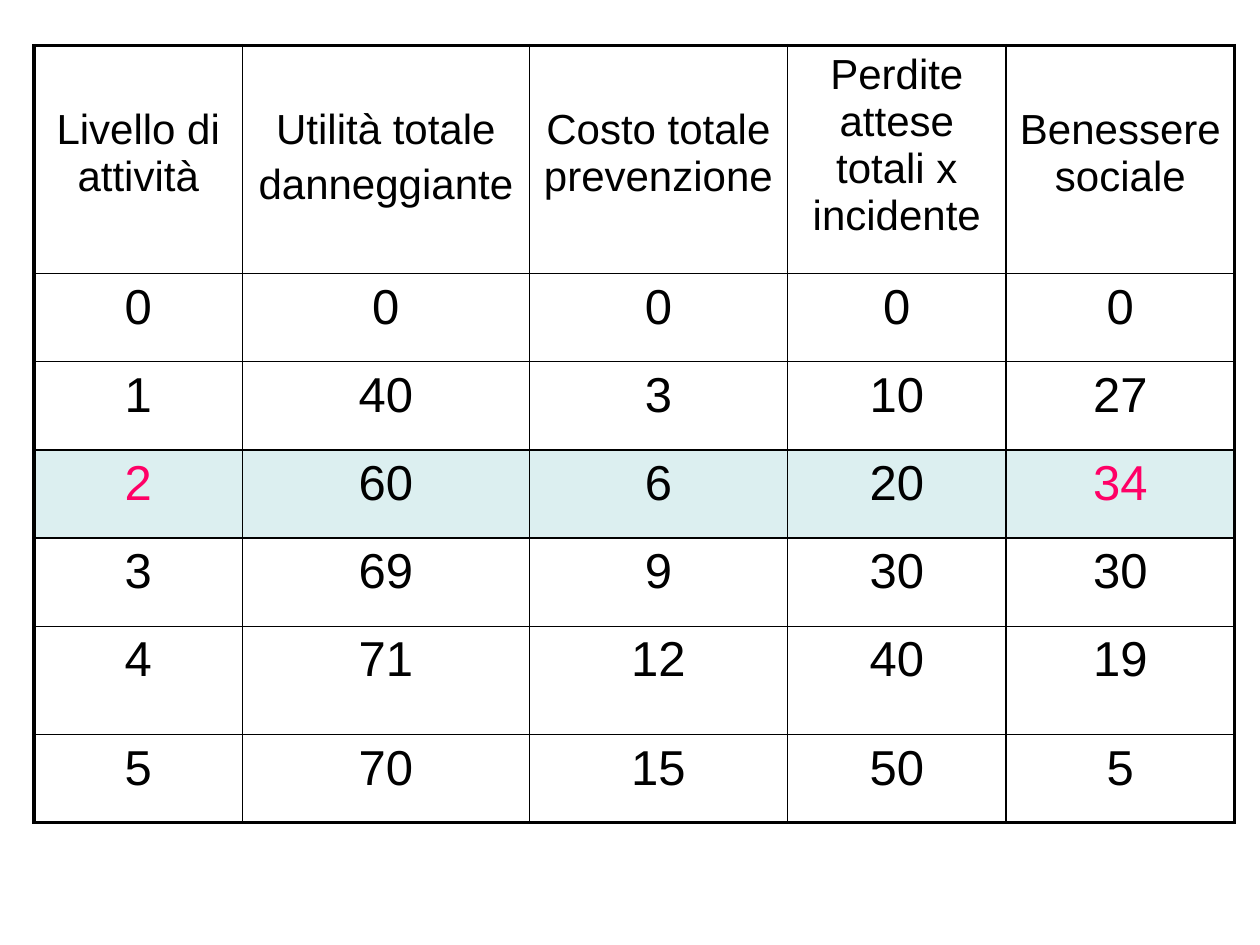
from lxml import etree
from pptx import Presentation
from pptx.dml.color import RGBColor
from pptx.enum.text import PP_ALIGN
from pptx.oxml.ns import qn
from pptx.util import Pt

CENTER = PP_ALIGN.CENTER
BLANK_LAYOUT = 6

# Content: each header is a list of paragraphs
HEADERS = [
    ["Livello di attività"],
    ["Utilità totale", "danneggiante"],
    ["Costo totale prevenzione"],
    ["Perdite attese totali x incidente"],
    ["Benessere sociale"],
]
LEVELS = [
    (0, 0, 0, 0, 0),
    (1, 40, 3, 10, 27),
    (2, 60, 6, 20, 34),
    (3, 69, 9, 30, 30),
    (4, 71, 12, 40, 19),
    (5, 70, 15, 50, 5),
]
OPTIMUM_ROW = 3
OPTIMUM_COLUMNS = (0, 4)
TALL_HEADER_COLUMN = 3

# Look, lengths in points
FONT = "Arial"
BLACK, PINK, PALE_TEAL = "000000", "FF0066", "BBE0E3"
HEADER_SIZE, VALUE_SIZE = 24, 28
OUTER_LINE, INNER_LINE = 2.25, 1
LEFT, TOP = 19.5, 26
COLUMN_WIDTHS = [119, 164, 147.5, 125, 130.5]
ROW_HEIGHTS = [130.3, 50.4, 50.4, 50.4, 50.4, 61.9, 50.4]
HEADER_DROP = 35


def rgb(hex_color):
    return RGBColor.from_string(hex_color)


def add_border(cell, side, width):
    line = etree.SubElement(cell._tc.get_or_add_tcPr(), qn(f"a:ln{side}"), w=str(Pt(width)))
    fill = etree.SubElement(line, qn("a:solidFill"))
    etree.SubElement(fill, qn("a:srgbClr"), val=BLACK)


def fill_half_clear(cell, color):
    cell.fill.solid()
    cell.fill.fore_color.rgb = rgb(color)
    color_element = cell._tc.tcPr.find(qn("a:solidFill")).find(qn("a:srgbClr"))
    etree.SubElement(color_element, qn("a:alpha"), val="50000")


def write(cell, paragraphs, size, color):
    frame = cell.text_frame
    for index, words in enumerate(paragraphs):
        paragraph = frame.add_paragraph() if index else frame.paragraphs[0]
        paragraph.alignment = CENTER
        paragraph.space_before = Pt(0.2 * size if index else 0)
        run = paragraph.add_run()
        run.text = words
        run.font.name = FONT
        run.font.size = Pt(size)
        run.font.color.rgb = rgb(color)


def main():
    prs = Presentation()
    prs.slide_width, prs.slide_height = Pt(720), Pt(540)
    slide = prs.slides.add_slide(prs.slide_layouts[BLANK_LAYOUT])

    # Table grid
    rows = [HEADERS] + [[[str(value)] for value in level] for level in LEVELS]
    last_row, last_column = len(rows) - 1, len(HEADERS) - 1
    table = slide.shapes.add_table(
        len(rows), len(HEADERS), Pt(LEFT), Pt(TOP),
        Pt(sum(COLUMN_WIDTHS)), Pt(sum(ROW_HEIGHTS))).table
    table.first_row = table.horz_banding = False
    for column, width in zip(table.columns, COLUMN_WIDTHS):
        column.width = Pt(width)
    for row, height in zip(table.rows, ROW_HEIGHTS):
        row.height = Pt(height)

    # Cells
    for r, row in enumerate(rows):
        for c, paragraphs in enumerate(row):
            cell = table.cell(r, c)
            on_edge = {"L": c == 0, "R": c == last_column, "T": r == 0, "B": r == last_row}
            for side, outer in on_edge.items():
                add_border(cell, side, OUTER_LINE if outer else INNER_LINE)
            if r == OPTIMUM_ROW:
                fill_half_clear(cell, PALE_TEAL)
            else:
                cell.fill.background()
            if r == 0 and c != TALL_HEADER_COLUMN:
                cell.margin_top = Pt(HEADER_DROP)
            optimum = r == OPTIMUM_ROW and c in OPTIMUM_COLUMNS
            write(cell, paragraphs, VALUE_SIZE if r else HEADER_SIZE, PINK if optimum else BLACK)

    prs.save("out.pptx")


if __name__ == "__main__":
    main()
